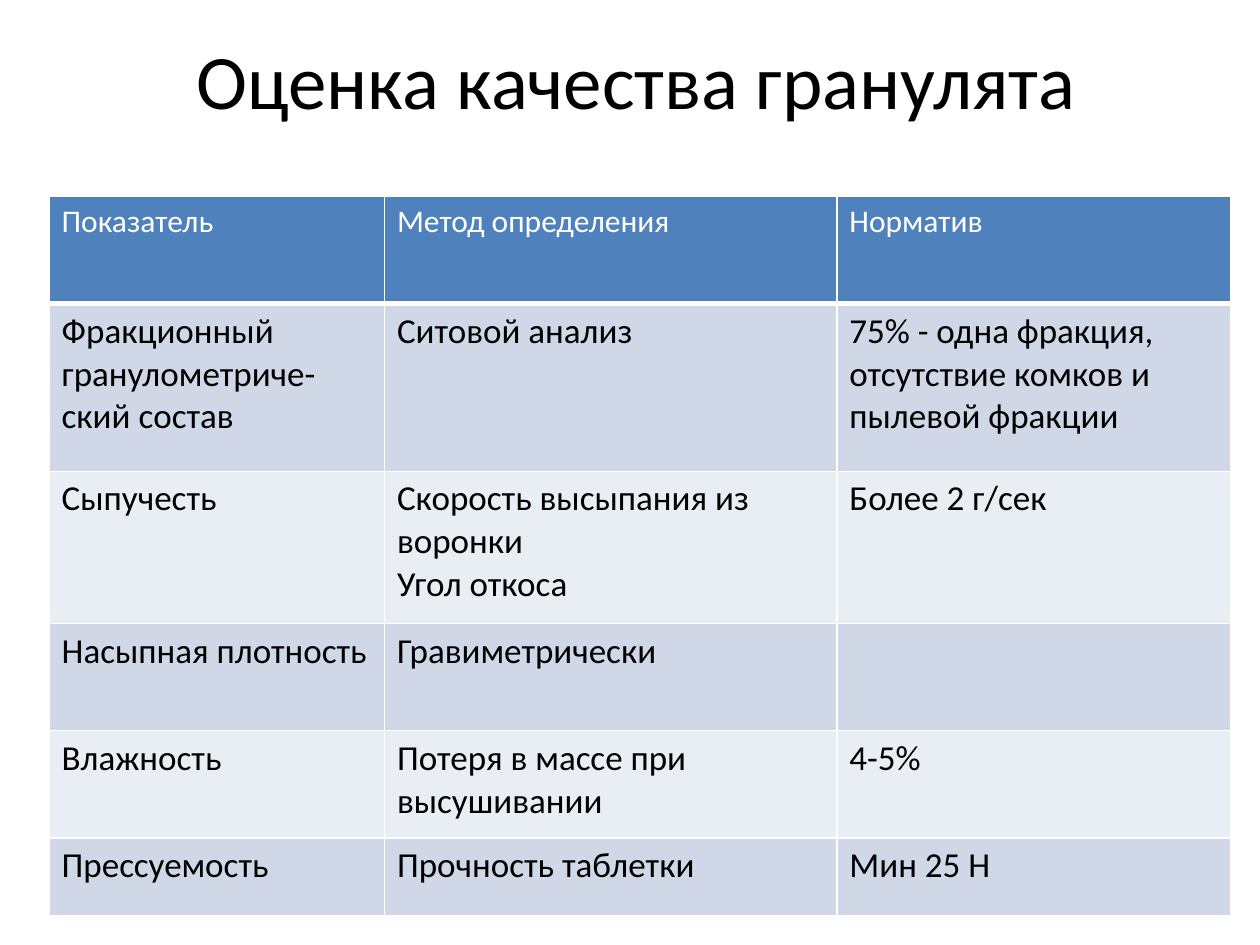
from lxml.etree import SubElement
from pptx import Presentation
from pptx.dml.color import RGBColor
from pptx.enum.text import MSO_ANCHOR as Anchor, PP_ALIGN as Align
from pptx.oxml.ns import qn
from pptx.util import Cm, Pt

WHITE, BLACK = "FFFFFF", "000000"
HEADER_FILL = "4F81BD"
BAND_FILLS = ("D0D8E8", "E9EDF4")

TITLE_FORMAT = {"name": "Calibri", "size": Pt(44)}
HEADER_FORMAT = {"name": "Calibri", "size": Pt(18), "bold": False}
BODY_FORMAT = {"name": "Calibri", "size": Pt(20), "bold": False}

COLUMN_WIDTHS = (6.76, 9.12, 7.95)
ROW_HEIGHTS = (2.16, 3.38, 3.07, 2.16, 2.16, 1.57)
INDICATORS = (
    ("Показатель", "Метод определения", "Норматив"),
    ("Фракционный гранулометриче-ский состав", "Ситовой анализ",
     "75% - одна фракция, отсутствие комков и пылевой фракции"),
    ("Сыпучесть", "Скорость высыпания из воронки\nУгол откоса", "Более 2 г/сек"),
    ("Насыпная плотность", "Гравиметрически", ""),
    ("Влажность", "Потеря в массе при высушивании", "4-5%"),
    ("Прессуемость", "Прочность таблетки", "Мин 25 Н"),
)


def paint(color_format, hex_color):
    color_format.rgb = RGBColor.from_string(hex_color)


def write(frame, text, font_format, hex_color):
    frame.text = text
    for paragraph in frame.paragraphs:
        for run in paragraph.runs:
            for key, value in font_format.items():
                setattr(run.font, key, value)
            paint(run.font.color, hex_color)


def add_title(slide, text):
    title = slide.shapes.add_textbox(Cm(1.4), Cm(0), Cm(22.86), Cm(3.18))
    frame = title.text_frame
    frame.word_wrap = True
    frame.vertical_anchor = Anchor.MIDDLE
    write(frame, text, TITLE_FORMAT, BLACK)
    frame.paragraphs[0].alignment = Align.CENTER


def set_borders(cell, bottom_width):
    properties = cell._tc.get_or_add_tcPr()
    for side, width in (("L", 1), ("R", 1), ("T", 1), ("B", bottom_width)):
        line = SubElement(properties, qn(f"a:ln{side}"), w=str(Pt(width)))
        fill = SubElement(line, qn("a:solidFill"))
        SubElement(fill, qn("a:srgbClr"), val=WHITE)


def fill_cell(cell, text, row_index):
    is_header = row_index == 0
    set_borders(cell, 3 if is_header else 1)
    cell.fill.solid()
    if is_header:
        paint(cell.fill.fore_color, HEADER_FILL)
        write(cell.text_frame, text, HEADER_FORMAT, WHITE)
    else:
        paint(cell.fill.fore_color, BAND_FILLS[(row_index - 1) % 2])
        write(cell.text_frame, text, BODY_FORMAT, BLACK)


def add_indicator_table(slide):
    table = slide.shapes.add_table(
        len(ROW_HEIGHTS), len(COLUMN_WIDTHS), Cm(0.99), Cm(3.96),
        Cm(sum(COLUMN_WIDTHS)), Cm(sum(ROW_HEIGHTS))).table
    for column, width in zip(table.columns, COLUMN_WIDTHS):
        column.width = Cm(width)
    for row_index, (row, height) in enumerate(zip(table.rows, ROW_HEIGHTS)):
        row.height = Cm(height)
        for cell, text in zip(row.cells, INDICATORS[row_index]):
            fill_cell(cell, text, row_index)


def main():
    presentation = Presentation()
    presentation.slide_width, presentation.slide_height = Cm(25.4), Cm(19.05)
    slide = presentation.slides.add_slide(presentation.slide_layouts[6])

    # Heading
    add_title(slide, "Оценка качества гранулята")
    # Indicators, methods and norms
    add_indicator_table(slide)

    presentation.save("out.pptx")


if __name__ == "__main__":
    main()
